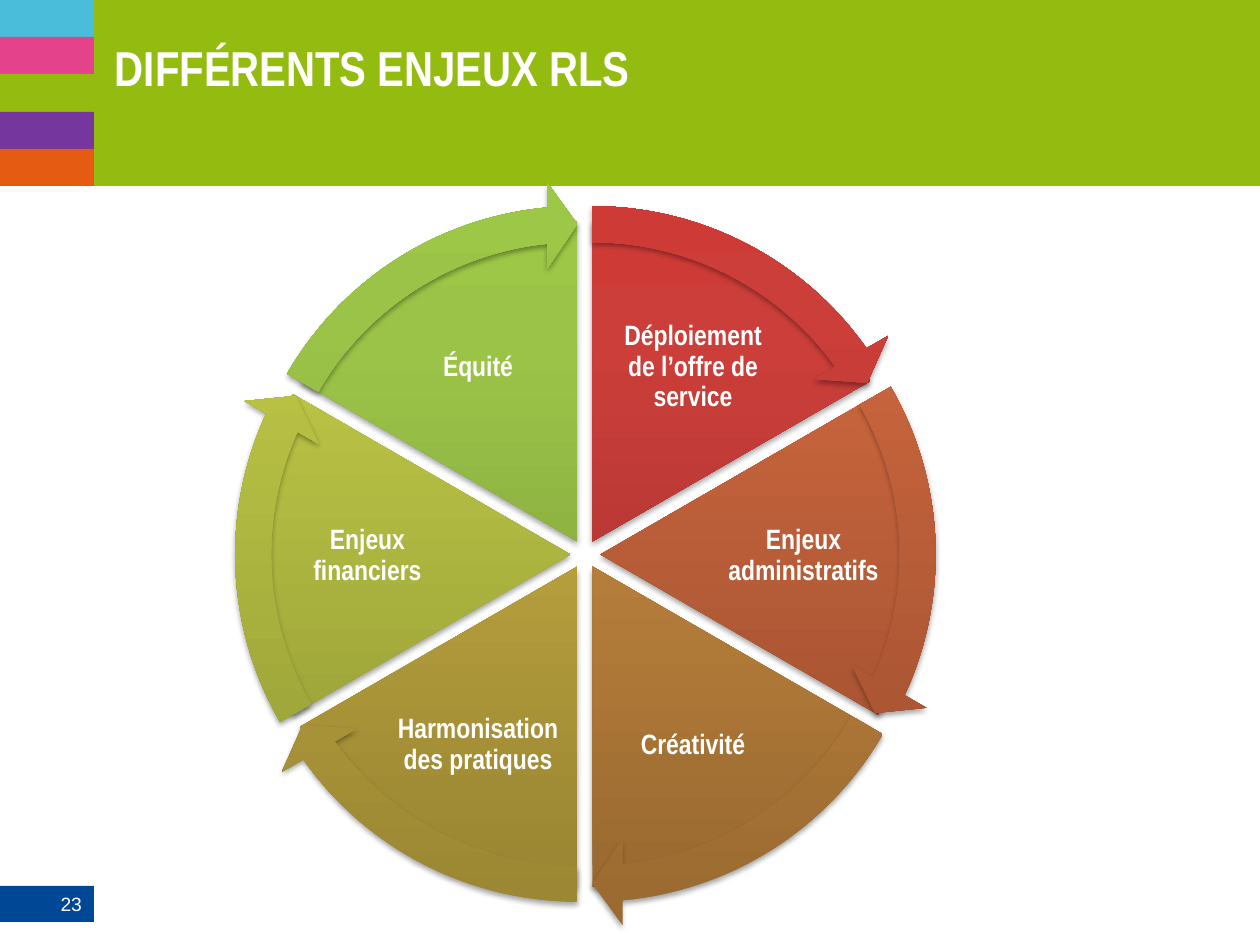
"""Build the slide on the issues of a local service network, shown as a segmented cycle."""
from dataclasses import dataclass
from math import cos, radians, sin

from lxml.etree import SubElement
from pptx import Presentation
from pptx.dml.color import RGBColor
from pptx.enum.shapes import MSO_SHAPE
from pptx.enum.text import MSO_ANCHOR, PP_ALIGN
from pptx.oxml.ns import qn
from pptx.util import Pt

RECTANGLE = MSO_SHAPE.RECTANGLE
PIE = MSO_SHAPE.PIE
CIRCULAR_ARROW = MSO_SHAPE.CIRCULAR_ARROW
LEFT, CENTER, RIGHT = PP_ALIGN.LEFT, PP_ALIGN.CENTER, PP_ALIGN.RIGHT
TOP, MIDDLE = MSO_ANCHOR.TOP, MSO_ANCHOR.MIDDLE

EMU_PER_PX = 914400 / 126
SLIDE_WIDTH, SLIDE_HEIGHT = 1260, 945
HEADER_HEIGHT, SIDE_WIDTH = 186, 94
CENTER_X, CENTER_Y = 585, 554
PIE_SIZE, ARROW_SIZE, SECTOR_OFFSET = 641, 721, 15
SECTOR_DEGREES, FIRST_DEGREES = 60, 270
ADJUSTMENT_PER_DEGREE = 0.6
ARROW_SWEEP = 32.72
ARROW_THICKNESS, ARROWHEAD_ANGLE, ARROWHEAD_WIDTH = 0.05, 3.28, 0.06

COLORS = {
    "white": "FFFFFF", "black": "000000", "navy": "004796",
    "cyan": "4ABDDB", "pink": "E5428C", "green": "94BC10",
    "purple": "75369E", "orange": "E55B12",
}
STRIPES = ("cyan", "pink", "green", "purple", "orange")


@dataclass(frozen=True)
class Box:
    """A rectangle in px."""
    left: int
    top: int
    width: int
    height: int

    def emu(self) -> list[int]:
        """Return the rectangle in EMU."""
        return [round(value * EMU_PER_PX)
                for value in (self.left, self.top, self.width, self.height)]


@dataclass(frozen=True)
class Sector:
    """One issue of the cycle, with its gradient from bottom to top."""
    label: str
    box: Box
    gradient: tuple[str, str, str]


SECTORS = (
    Sector("Déploiement de l’offre de service", Box(609, 302, 168, 130),
           ("9C2F2D", "CB3E3A", "CE3B37")),
    Sector("Enjeux administratifs", Box(716, 493, 175, 126),
           ("9B4E2F", "C9653D", "CD643A")),
    Sector("Créativité", Box(609, 680, 168, 130),
           ("9A6A31", "C88A40", "CB8B3D")),
    Sector("Harmonisation des pratiques", Box(394, 680, 168, 130),
           ("998533", "C6AD42", "CAAF40")),
    Sector("Enjeux financiers", Box(280, 493, 175, 126),
           ("919835", "BCC545", "BFC843")),
    Sector("Équité", Box(394, 302, 168, 130),
           ("779737", "9BC348", "9DC746")),
)


def write_text(shape, text: str, *, size: int, font: str = "Arial Narrow",
               bold: bool = True, align=LEFT, anchor=TOP, inset: int = 0,
               line_spacing: float = 1.0, space_after: float = 0) -> None:
    """Write one formatted white paragraph in a shape."""
    frame = shape.text_frame
    frame.word_wrap = True
    frame.vertical_anchor = anchor
    margin = round(inset * EMU_PER_PX)
    frame.margin_left = frame.margin_right = margin
    frame.margin_top = frame.margin_bottom = margin
    paragraph = frame.paragraphs[0]
    paragraph.alignment = align
    paragraph.line_spacing = line_spacing
    paragraph.space_after = Pt(space_after)
    run = paragraph.add_run()
    run.text = text
    run.font.name = font
    run.font.size = Pt(size)
    run.font.bold = bold
    run.font.color.rgb = RGBColor.from_string(COLORS["white"])


def add_plain_shape(slide, kind, box: Box):
    """Add a preset shape with neither line nor shadow."""
    shape = slide.shapes.add_shape(kind, *box.emu())
    shape.line.fill.background()
    shape.shadow.inherit = False
    return shape


def add_rectangle(slide, box: Box, color: str):
    """Add a rectangle of one colour."""
    shape = add_plain_shape(slide, RECTANGLE, box)
    shape.fill.solid()
    shape.fill.fore_color.rgb = RGBColor.from_string(COLORS[color])
    return shape


def fill_gradient(shape, colors: tuple[str, str, str]) -> None:
    """Fill a shape with three stops running from bottom to top."""
    shape.fill.gradient()
    shape.fill.gradient_angle = 90
    stops = shape._element.spPr.find(qn("a:gradFill")).find(qn("a:gsLst"))
    for stop in list(stops):
        stops.remove(stop)
    for position, color in zip((0, 80000, 100000), colors):
        stop = SubElement(stops, qn("a:gs"), pos=str(position))
        SubElement(stop, qn("a:srgbClr"), val=color)


def add_shadow(shape) -> None:
    """Give a shape a soft shadow below it."""
    effects = shape._element.spPr.find(qn("a:effectLst"))
    shadow = SubElement(effects, qn("a:outerShdw"), blurRad="40000", dist="23000",
                        dir="5400000", rotWithShape="0")
    color = SubElement(shadow, qn("a:srgbClr"), val=COLORS["black"])
    SubElement(color, qn("a:alpha"), val="35000")


def add_cycle_part(slide, kind, index: int, size: int, adjustments: list[float]) -> None:
    """Add a part of the cycle, moved outwards along the middle of its sector."""
    middle = radians(FIRST_DEGREES + SECTOR_DEGREES * (index + 0.5))
    left = round(CENTER_X + SECTOR_OFFSET * cos(middle) - size / 2)
    top = round(CENTER_Y + SECTOR_OFFSET * sin(middle) - size / 2)
    shape = add_plain_shape(slide, kind, Box(left, top, size, size))
    for position, value in enumerate(adjustments):
        shape.adjustments[position] = value
    fill_gradient(shape, SECTORS[index].gradient)
    add_shadow(shape)


def sector_start(index: int) -> float:
    """Return the start angle of a sector as an adjustment value."""
    return (FIRST_DEGREES + SECTOR_DEGREES * index) % 360 * ADJUSTMENT_PER_DEGREE


def add_cycle(slide) -> None:
    """Add the sectors with their labels, then the arrows around them."""
    for index, sector in enumerate(SECTORS):
        add_cycle_part(slide, PIE, index, PIE_SIZE,
                       [sector_start(index), sector_start(index + 1)])
        label = slide.shapes.add_textbox(*sector.box.emu())
        write_text(label, sector.label, size=16, align=CENTER, anchor=MIDDLE,
                   inset=3, line_spacing=0.9, space_after=5.6)
    for index in range(len(SECTORS)):
        start = sector_start(index)
        end = (start + ARROW_SWEEP) % (360 * ADJUSTMENT_PER_DEGREE)
        add_cycle_part(slide, CIRCULAR_ARROW, index, ARROW_SIZE,
                       [ARROW_THICKNESS, ARROWHEAD_ANGLE, end, start, ARROWHEAD_WIDTH])


def add_frame(slide) -> None:
    """Add the header, the page number, the stripes and the title."""
    add_rectangle(slide, Box(SIDE_WIDTH, 0, SLIDE_WIDTH - SIDE_WIDTH, HEADER_HEIGHT), "green")
    number = add_rectangle(slide, Box(0, 886, SIDE_WIDTH, 36), "navy")
    write_text(number, "23", size=11, font="Arial", bold=False, align=RIGHT,
               anchor=MIDDLE, inset=12)
    edges = [round(HEADER_HEIGHT * step / len(STRIPES)) for step in range(len(STRIPES) + 1)]
    for color, top, bottom in zip(STRIPES, edges, edges[1:]):
        add_rectangle(slide, Box(0, top, SIDE_WIDTH, bottom - top), color)
    title = slide.shapes.add_textbox(*Box(115, 38, 1111, 137).emu())
    write_text(title, "DIFFÉRENTS ENJEUX RLS", size=28)


def main() -> None:
    """Build and save the presentation."""
    presentation = Presentation()
    presentation.slide_width = round(SLIDE_WIDTH * EMU_PER_PX)
    presentation.slide_height = round(SLIDE_HEIGHT * EMU_PER_PX)
    slide = presentation.slides.add_slide(presentation.slide_layouts[6])
    add_frame(slide)
    add_cycle(slide)
    presentation.save("out.pptx")


if __name__ == "__main__":
    main()
